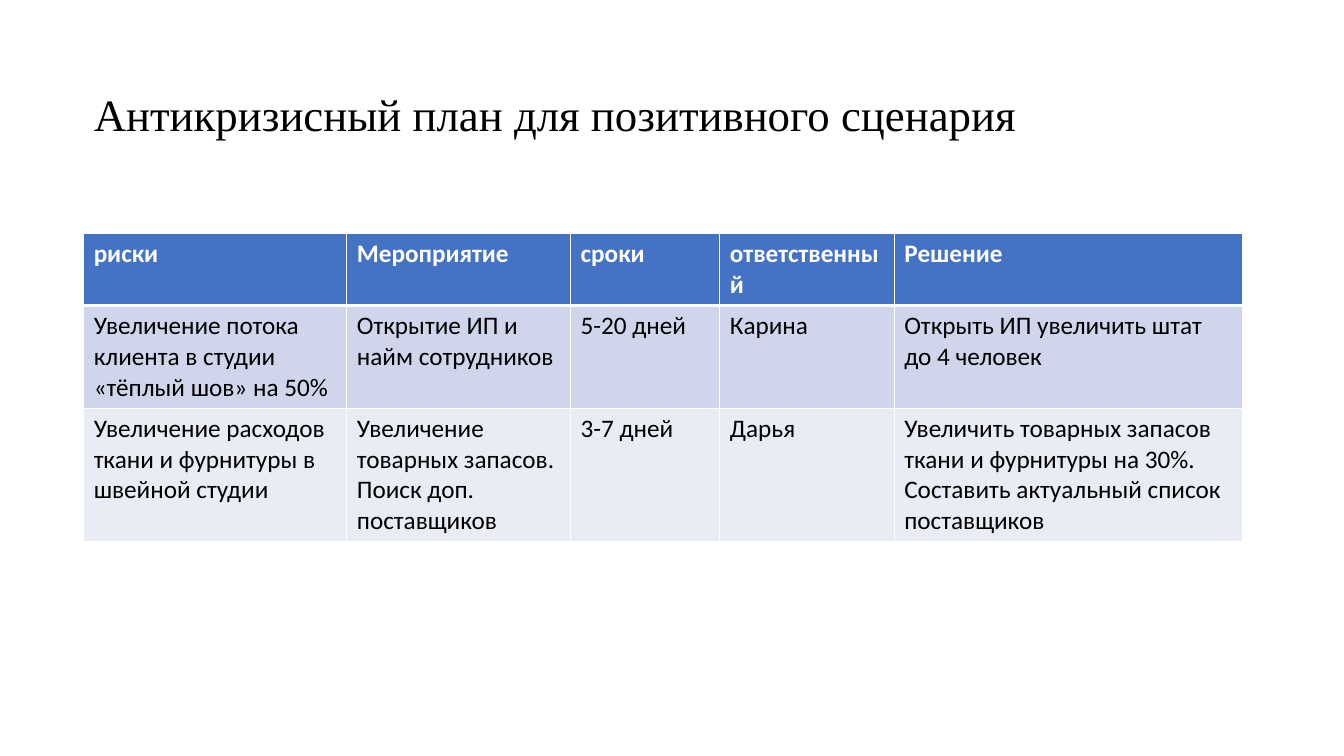
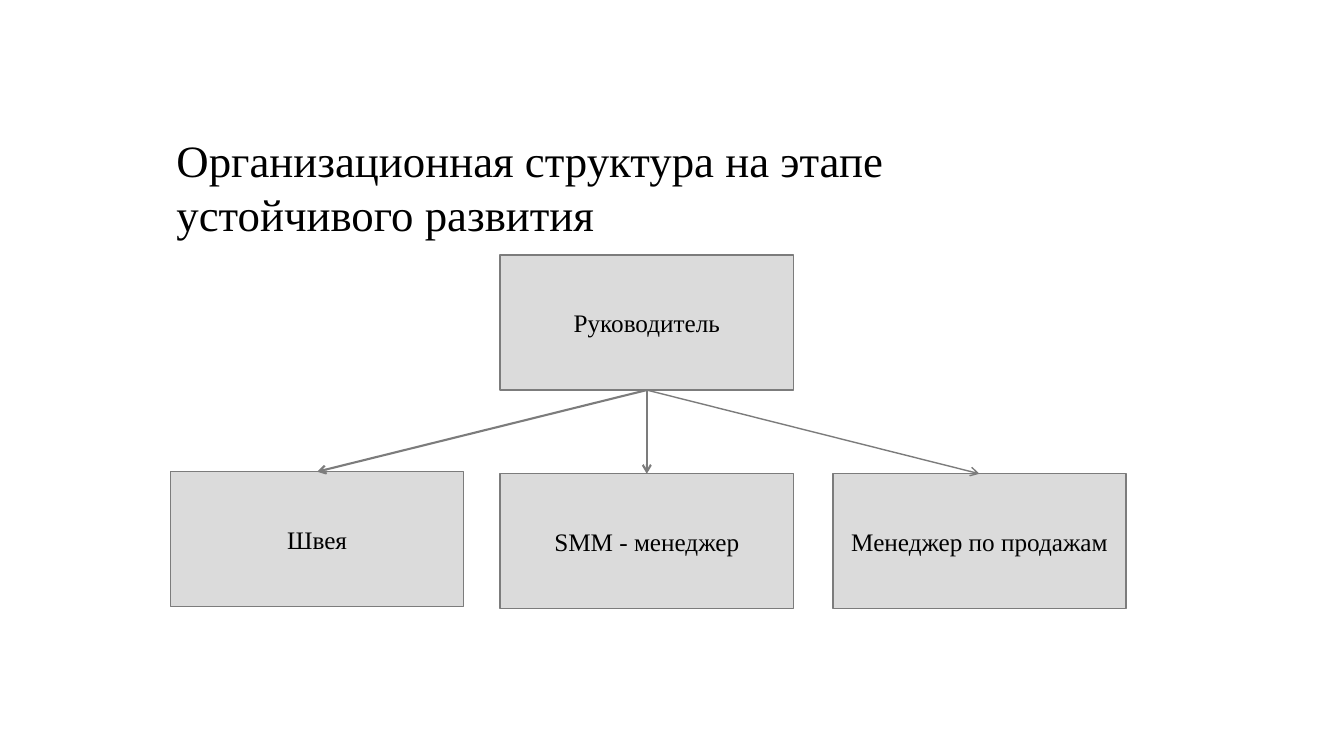
"""Build a crisis plan table slide and an organisation chart slide."""
from lxml import etree
from pptx import Presentation
from pptx.dml.color import RGBColor
from pptx.enum import shapes, text
from pptx.oxml.ns import qn
from pptx.util import Inches, Pt

SERIF, SANS = "Times New Roman", "Calibri"
BLACK, WHITE, GREY, DARK_GREY = "000000", "FFFFFF", "DBDBDB", "7C7C7C"
HEADER_FILL, BAND_FILLS = "4472C4", ("CFD5EA", "E9EBF5")


def color(value):
    return RGBColor.from_string(value)


def write(frame, words, **formats):
    frame.text = words
    para = frame.paragraphs[0]
    para.font.color.rgb = color(formats.pop("ink", BLACK))
    for name, value in formats.items():
        setattr(para.font, name, value)
    return para


deck = Presentation()
deck.slide_width, deck.slide_height = Inches(13.33), Inches(7.5)

titles = [
    ("Антикризисный план для позитивного сценария", (0.83, 0.81, 10.03, 0.64)),
    ("Организационная структура на этапе устойчивого развития", (1.65, 1.27, 8.66, 1.18)),
]
pages = []
for words, place in titles:
    page = deck.slides.add_slide(deck.slide_layouts[5])
    title = page.shapes.title
    title.left, title.top, title.width, title.height = map(Inches, place)
    para = write(title.text_frame, words, name=SERIF, size=Pt(32))
    para.alignment = text.PP_ALIGN.LEFT
    para.line_spacing = 1.0
    frame_format = {
        "word_wrap": True,
        "auto_size": text.MSO_AUTO_SIZE.NONE,
        "vertical_anchor": text.MSO_ANCHOR.TOP,
    }
    for name, value in frame_format.items():
        setattr(title.text_frame, name, value)
    pages.append(page)
plan_page, structure_page = pages

plan = [
    ("риски", "Мероприятие", "сроки", "ответственный", "Решение"),
    ("Увеличение потока клиента в студии «тёплый шов» на 50%",
     "Открытие ИП и найм сотрудников", "5-20 дней", "Карина",
     "Открыть ИП увеличить штат до 4 человек"),
    ("Увеличение расходов ткани и фурнитуры в швейной студии",
     "Увеличение товарных запасов. Поиск доп. поставщиков", "3-7 дней", "Дарья",
     "Увеличить товарных запасов ткани и фурнитуры на 30%. "
     "Составить актуальный список поставщиков"),
]
column_widths = (2.61, 2.22, 1.48, 1.73, 3.45)
row_heights = (0.7, 1.02, 1.32)
table = plan_page.shapes.add_table(
    len(plan), len(column_widths), Inches(0.83), Inches(2.32),
    Inches(sum(column_widths)), Inches(sum(row_heights))).table
for column, width in zip(table.columns, column_widths):
    column.width = Inches(width)
for row_index, (row, height, entries) in enumerate(zip(table.rows, row_heights, plan)):
    row.height = Inches(height)
    header = row_index == 0
    fill = HEADER_FILL if header else BAND_FILLS[(row_index - 1) % 2]
    for cell, words in zip(row.cells, entries):
        write(cell.text_frame, words, name=SANS, size=Pt(18), bold=header,
              ink=WHITE if header else BLACK)
        properties = cell._tc.get_or_add_tcPr()
        for side in "LRTB":
            thick = (row_index, side) in ((0, "B"), (1, "T"))
            border = etree.SubElement(properties, qn(f"a:ln{side}"), w=str(Pt(3 if thick else 1)))
            solid = etree.SubElement(border, qn("a:solidFill"))
            etree.SubElement(solid, qn("a:srgbClr"), val=WHITE)
        cell.fill.solid()
        cell.fill.fore_color.rgb = color(fill)

box_width, box_height = 2.91, 1.34
roles = [
    ("Руководитель", 4.96, 2.53, None),
    ("Швея", 1.69, 4.68, 1.5),
    ("SMM - менеджер", 4.96, 4.7, 1.5),
    ("Менеджер по продажам", 8.26, 4.7, 1),
]
_, head_left, head_top, _ = roles[0]
for role, left, top, arrow_weight in roles:
    box = structure_page.shapes.add_shape(
        shapes.MSO_SHAPE.RECTANGLE, Inches(left), Inches(top),
        Inches(box_width), Inches(box_height))
    box.shadow.inherit = False
    box.fill.solid()
    box.fill.fore_color.rgb = color(GREY)
    box.line.color.rgb = color(DARK_GREY)
    box.line.width = Pt(1)
    box.text_frame.word_wrap = True
    box.text_frame.vertical_anchor = text.MSO_ANCHOR.MIDDLE
    para = write(box.text_frame, role, name=SERIF, size=Pt(18))
    para.alignment = text.PP_ALIGN.CENTER
    if arrow_weight:
        arrow = structure_page.shapes.add_connector(
            shapes.MSO_CONNECTOR.STRAIGHT,
            Inches(head_left + box_width / 2), Inches(head_top + box_height),
            Inches(left + box_width / 2), Inches(top))
        arrow.line.color.rgb = color(DARK_GREY)
        arrow.line.width = Pt(arrow_weight)
        etree.SubElement(arrow.line._get_or_add_ln(), qn("a:tailEnd"), type="arrow")
        etree.SubElement(arrow._element.spPr, qn("a:effectLst"))

deck.save("out.pptx")
